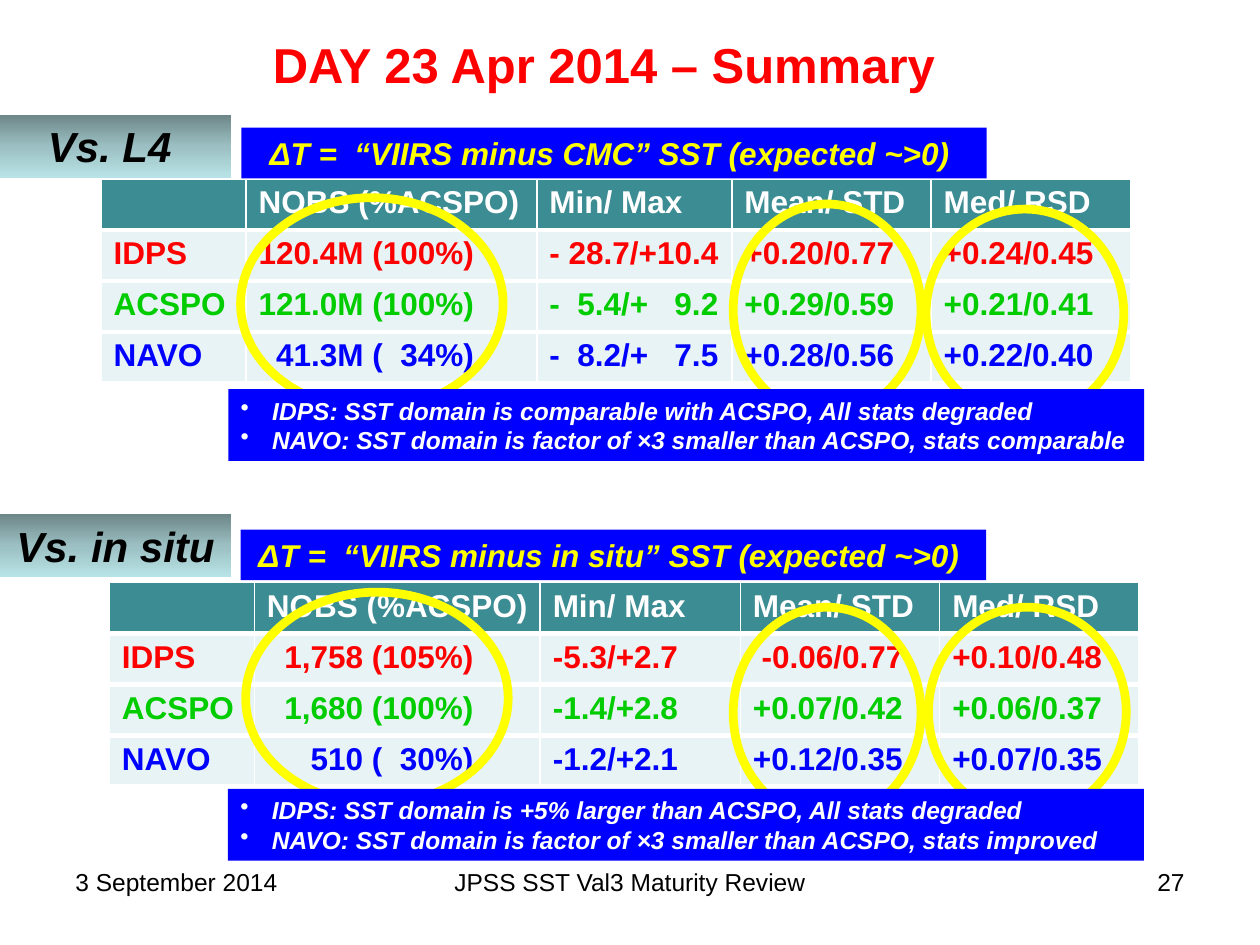
"""Build the one-slide summary of daytime SST validation statistics."""
from copy import deepcopy
from dataclasses import dataclass

from lxml import etree
from pptx import Presentation
from pptx.dml.color import RGBColor
from pptx.enum.shapes import MSO_SHAPE
from pptx.enum.text import MSO_ANCHOR, PP_ALIGN
from pptx.oxml.ns import qn
from pptx.util import Pt

RECTANGLE, OVAL = MSO_SHAPE.RECTANGLE, MSO_SHAPE.OVAL
LEFT, CENTER, RIGHT = PP_ALIGN.LEFT, PP_ALIGN.CENTER, PP_ALIGN.RIGHT
TOP, MIDDLE = MSO_ANCHOR.TOP, MSO_ANCHOR.MIDDLE

WHITE = RGBColor(0xFF, 0xFF, 0xFF)
BLACK = RGBColor(0x00, 0x00, 0x00)
RED = RGBColor(0xFF, 0x00, 0x00)
GREEN = RGBColor(0x00, 0xCC, 0x00)
BLUE = RGBColor(0x00, 0x00, 0xFF)
YELLOW = RGBColor(0xFF, 0xFF, 0x00)
TEAL = RGBColor(0x3C, 0x8C, 0x93)
PALE_TEAL = RGBColor(0xE7, 0xF3, 0xF4)
BADGE_STOPS = (
    (0.0, RGBColor(0x6D, 0x86, 0x88)),
    (0.5, RGBColor(0x9B, 0xBF, 0xC2)),
    (1.0, RGBColor(0xB8, 0xE3, 0xE6)),
)

HEADINGS = ("", "NOBS (%ACSPO)", "Min/ Max", "Mean/ STD", "Med/ RSD")
ROW_COLORS = (WHITE, RED, GREEN, BLUE)
ROW_HEIGHT = 29.2


@dataclass(frozen=True)
class Box:
    left: float
    top: float
    width: float
    height: float

    def lengths(self) -> tuple:
        return Pt(self.left), Pt(self.top), Pt(self.width), Pt(self.height)


@dataclass(frozen=True)
class TextStyle:
    size: float
    color: RGBColor
    bold: bool = False
    italic: bool = False
    align: PP_ALIGN = LEFT


@dataclass(frozen=True)
class Label:
    text: str
    box: Box
    style: TextStyle


@dataclass(frozen=True)
class Comparison:
    badge: Label
    caption: Label
    table_left: float
    table_top: float
    column_widths: tuple
    rows: tuple
    highlights: tuple
    findings: Label


BADGE_STYLE = TextStyle(24, BLACK, True, True, CENTER)
CAPTION_STYLE = TextStyle(18, YELLOW, True, True, CENTER)
FINDINGS_STYLE = TextStyle(14, WHITE, True, True)

COMPARISONS = (
    Comparison(
        badge=Label("Vs. L4 ", Box(0, 65.5, 132, 36), BADGE_STYLE),
        caption=Label("ΔT =  “VIIRS minus CMC” SST (expected ~>0) ",
                      Box(137.9, 73, 426, 29), CAPTION_STYLE),
        table_left=57.8, table_top=102.2,
        column_widths=(82.8, 166.2, 111.4, 113.9, 113.9),
        rows=(
            ("IDPS", "120.4M (100%)", "- 28.7/+10.4", "+0.20/0.77", "+0.24/0.45"),
            ("ACSPO", "121.0M (100%)", "-  5.4/+   9.2", "+0.29/0.59", "+0.21/0.41"),
            ("NAVO", "  41.3M (  34%)", "-  8.2/+   7.5", "+0.28/0.56", "+0.22/0.40"),
        ),
        highlights=(Box(137.5, 113, 150, 121), Box(419, 116.6, 107.3, 121),
                    Box(529.2, 119.5, 113, 119.5)),
        findings=Label("IDPS: SST domain is comparable with ACSPO, All stats degraded\n"
                       "NAVO: SST domain is factor of ×3 smaller than ACSPO, stats comparable",
                       Box(130.5, 222.4, 523.4, 41), FINDINGS_STYLE),
    ),
    Comparison(
        badge=Label("Vs. in situ ", Box(0, 293.7, 132, 36), BADGE_STYLE),
        caption=Label("ΔT =  “VIIRS minus in situ” SST (expected ~>0) ",
                      Box(137.6, 302.6, 426, 29), CAPTION_STYLE),
        table_left=62.5, table_top=332.8,
        column_widths=(82.8, 163.4, 114.4, 113.9, 113.9),
        rows=(
            ("IDPS", "  1,758 (105%)", "-5.3/+2.7", " -0.06/0.77", "+0.10/0.48"),
            ("ACSPO", "  1,680 (100%)", "-1.4/+2.8", "+0.07/0.42", "+0.06/0.37"),
            ("NAVO", "     510 (  30%)", "-1.2/+2.1", "+0.12/0.35", "+0.07/0.35"),
        ),
        highlights=(Box(140.4, 338.4, 150, 121), Box(419, 347, 107.3, 121),
                    Box(530.6, 347, 113, 119.5)),
        findings=Label("IDPS: SST domain is +5% larger than ACSPO, All stats degraded\n"
                       "NAVO: SST domain is factor of ×3 smaller than ACSPO, stats improved",
                       Box(130.3, 450.8, 523.4, 41), FINDINGS_STYLE),
    ),
)

TITLE = Label("DAY 23 Apr 2014 – Summary", Box(60, 16, 570, 75),
              TextStyle(28, RED, True, align=CENTER))
FOOTERS = (
    Label("3 September 2014", Box(36, 492, 168, 37.5), TextStyle(14, BLACK)),
    Label("JPSS SST Val3 Maturity Review", Box(246, 492, 228, 37.5),
          TextStyle(14, BLACK, align=CENTER)),
    Label("27", Box(516, 492, 168, 37.5), TextStyle(14, BLACK, align=RIGHT)),
)


def write_text(frame, text: str, style: TextStyle) -> None:
    frame.text = text
    frame.word_wrap = True
    for paragraph in frame.paragraphs:
        paragraph.alignment = style.align
        for run in paragraph.runs:
            font = run.font
            font.name, font.size = "Arial", Pt(style.size)
            font.bold, font.italic = style.bold, style.italic
            font.color.rgb = style.color


def add_plain_label(slide, label: Label) -> None:
    frame = slide.shapes.add_textbox(*label.box.lengths()).text_frame
    write_text(frame, label.text, label.style)
    frame.vertical_anchor = TOP


def add_panel(slide, label: Label):
    panel = slide.shapes.add_shape(RECTANGLE, *label.box.lengths())
    panel.shadow.inherit = False
    panel.fill.solid()
    panel.fill.fore_color.rgb = BLUE
    panel.line.fill.background()
    write_text(panel.text_frame, label.text, label.style)
    panel.text_frame.vertical_anchor = MIDDLE
    return panel


def add_badge(slide, label: Label) -> None:
    badge = add_panel(slide, label)
    badge.fill.gradient()
    badge.fill.gradient_angle = 270
    stop_list = badge.fill.gradient_stops
    first_stop = next(badge.element.iter(qn("a:gs")))
    first_stop.addnext(deepcopy(first_stop))
    stop_list = badge.fill.gradient_stops
    for stop, (position, color) in zip(stop_list, BADGE_STOPS):
        stop.position = position
        stop.color.rgb = color


def add_findings(slide, label: Label) -> None:
    findings = add_panel(slide, label)
    for paragraph in findings.text_frame.paragraphs:
        properties = paragraph._p.get_or_add_pPr()
        properties.set("marL", str(Pt(18)))
        properties.set("indent", str(-Pt(18)))
        etree.SubElement(properties, qn("a:buChar"), char="•")


def add_highlight(slide, box: Box) -> None:
    ring = slide.shapes.add_shape(OVAL, *box.lengths())
    ring.shadow.inherit = False
    ring.fill.background()
    ring.line.color.rgb = YELLOW
    ring.line.width = Pt(5)


def add_borders(cell, top_width: float) -> None:
    properties = cell._tc.get_or_add_tcPr()
    for side, width in (("L", 1), ("R", 1), ("T", top_width), ("B", 3)):
        border = etree.SubElement(properties, qn(f"a:ln{side}"), w=str(Pt(width)))
        fill = etree.SubElement(border, qn("a:solidFill"))
        etree.SubElement(fill, qn("a:srgbClr"), val=str(WHITE))


def add_statistics(slide, comparison: Comparison) -> None:
    rows = (HEADINGS, *comparison.rows)
    widths = comparison.column_widths
    box = Box(comparison.table_left, comparison.table_top, sum(widths), ROW_HEIGHT * len(rows))
    table = slide.shapes.add_table(len(rows), len(widths), *box.lengths()).table
    for column, width in zip(table.columns, widths):
        column.width = Pt(width)
    for row_index, (values, color) in enumerate(zip(rows, ROW_COLORS)):
        table.rows[row_index].height = Pt(ROW_HEIGHT)
        for cell, value in zip(table.rows[row_index].cells, values):
            write_text(cell.text_frame, value, TextStyle(18, color, True))
            add_borders(cell, 3 if row_index else 1)
            cell.fill.solid()
            cell.fill.fore_color.rgb = PALE_TEAL if row_index else TEAL


def main() -> None:
    presentation = Presentation()
    presentation.slide_width, presentation.slide_height = Pt(720), Pt(540)
    slide = presentation.slides.add_slide(presentation.slide_layouts[6])
    for comparison in COMPARISONS:
        add_statistics(slide, comparison)
        add_panel(slide, comparison.caption)
        for box in comparison.highlights:
            add_highlight(slide, box)
        add_findings(slide, comparison.findings)
        add_badge(slide, comparison.badge)
    for label in (TITLE, *FOOTERS):
        add_plain_label(slide, label)
    presentation.save("out.pptx")


if __name__ == "__main__":
    main()
